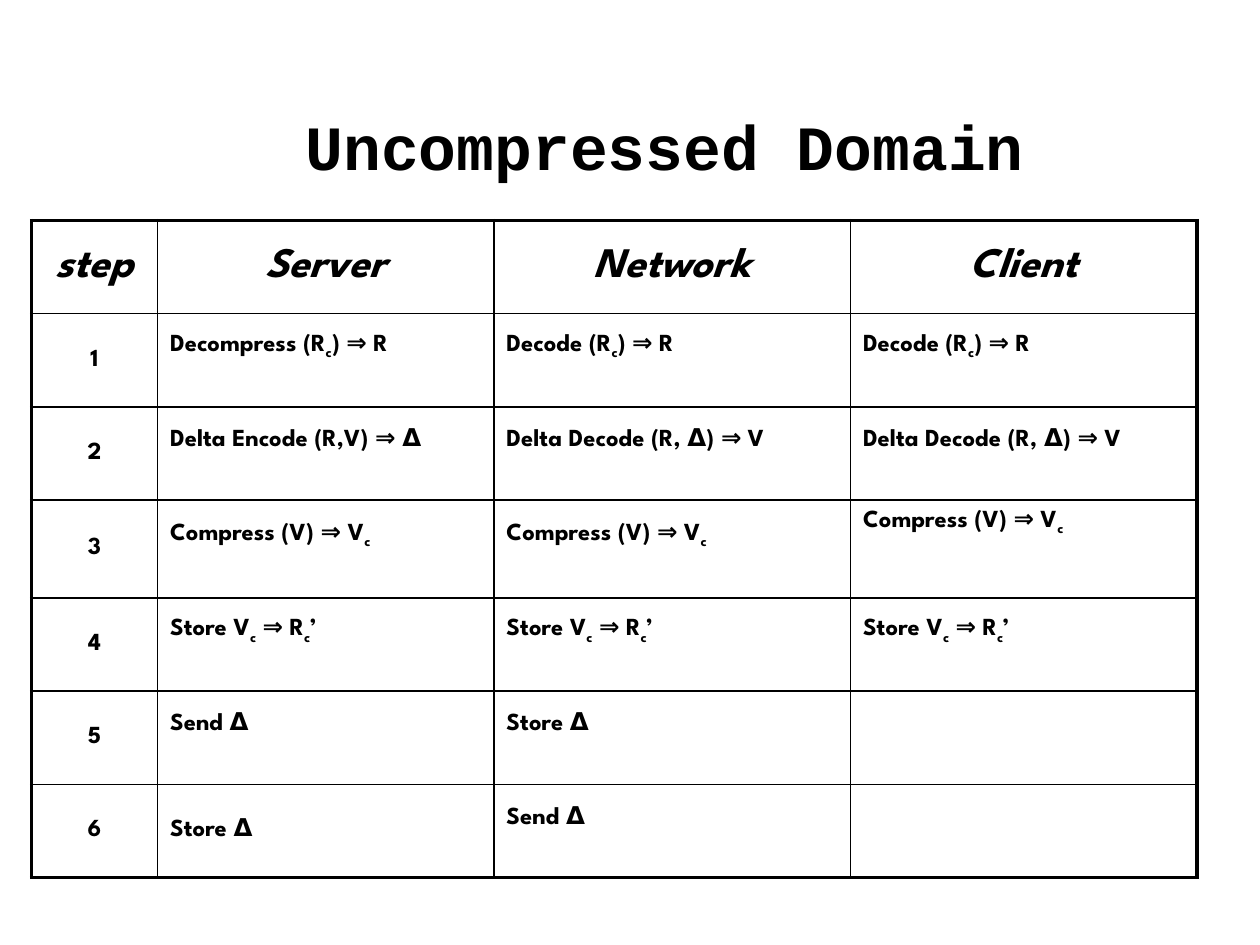
import dataclasses

import lxml.etree
import pptx
import pptx.dml.color
import pptx.enum.text
import pptx.oxml.ns
import pptx.util

ALIGN = pptx.enum.text.PP_ALIGN
MIDDLE = pptx.enum.text.MSO_ANCHOR.MIDDLE
INCH = pptx.util.Inches


@dataclasses.dataclass(frozen=True)
class Theme:
    ink: str = "000000"
    title_font: str = "Courier New"
    font: str = "League Spartan"
    title: float = 36
    head: float = 24
    body: float = 14
    thin: float = 1
    thick: float = 2.25


THEME = Theme()
COLS = (1, 2.67, 2.83, 2.75)
ROW = 0.74
PAD = 0.05
LIFT = 0.2

# The letter after an underscore is a subscript.
STEPS = (
    ("step", "Server", "Network", "Client"),
    ("1", "Decompress (R_c) ⇒ R", "Decode (R_c) ⇒ R", "Decode (R_c) ⇒ R"),
    ("2", "Delta Encode (R,V) ⇒ Δ", "Delta Decode (R, Δ) ⇒ V",
     "Delta Decode (R, Δ) ⇒ V"),
    ("3",) + ("Compress (V) ⇒ V_c",) * 3,
    ("4",) + ("Store V_c ⇒ R_c’",) * 3,
    ("5", "Send Δ", "Store Δ", ""),
    ("6", "Store Δ", "Send Δ", ""),
)
# Space kept below the text, where it differs from LIFT.
LIFTS = {(3, 3): 0.41, (6, 1): 0}


def style(font, face, size, slant=False):
    font.name = face
    font.size = pptx.util.Pt(size)
    font.bold = True
    font.italic = slant
    font.color.rgb = pptx.dml.color.RGBColor.from_string(THEME.ink)


def add_title(slide, text):
    box = slide.shapes.add_textbox(INCH(1.4), INCH(0.75), INCH(7.75), INCH(0.8))
    frame = box.text_frame
    frame.word_wrap = True
    frame.vertical_anchor = MIDDLE
    frame.text = text
    line = frame.paragraphs[0]
    line.alignment = ALIGN.CENTER
    style(line.runs[0].font, THEME.title_font, THEME.title)


def add_runs(line, text, size, slant):
    """Write text in runs, lowering each letter marked by an underscore."""
    first, *rest = text.split("_")
    parts = [(first, False)]
    for part in rest:
        parts += [(part[0], True), (part[1:], False)]
    for words, low in parts:
        if words:
            run = line.add_run()
            run.text = words
            style(run.font, THEME.font, size, slant)
            if low:
                run.font._element.set("baseline", "-25000")


def add_edges(cell, widths):
    """Draw the left, right, top and bottom borders, in that order."""
    props = cell._tc.get_or_add_tcPr()
    name = pptx.oxml.ns.qn
    for side, width in zip("LRTB", widths):
        edge = lxml.etree.SubElement(
            props, name("a:ln" + side), w=str(pptx.util.Pt(width)))
        fill = lxml.etree.SubElement(edge, name("a:solidFill"))
        lxml.etree.SubElement(fill, name("a:srgbClr"), val=THEME.ink)


def fill_cell(cell, text, row, col):
    head = row == 0
    center = head or col == 0
    outer = (col == 0, col == len(COLS) - 1, head, row == len(STEPS) - 1)
    add_edges(cell, [THEME.thick if side else THEME.thin for side in outer])
    cell.fill.background()
    cell.vertical_anchor = MIDDLE
    if not center:
        cell.margin_bottom = INCH(PAD + LIFTS.get((row, col), LIFT))
    line = cell.text_frame.paragraphs[0]
    line.alignment = ALIGN.CENTER if center else ALIGN.LEFT
    line.font.size = pptx.util.Pt(THEME.body)
    add_runs(line, text, THEME.head if head else THEME.body, head)


def add_steps(slide):
    shape = slide.shapes.add_table(
        len(STEPS), len(COLS), INCH(0.25), INCH(1.75),
        INCH(sum(COLS)), INCH(ROW * len(STEPS)))
    table = shape.table
    table.first_row = table.horz_banding = False
    for col, width in zip(table.columns, COLS):
        col.width = INCH(width)
    for row, texts in enumerate(STEPS):
        table.rows[row].height = INCH(ROW)
        for col, text in enumerate(texts):
            fill_cell(table.cell(row, col), text, row, col)


def main():
    deck = pptx.Presentation()
    deck.slide_width, deck.slide_height = INCH(10), INCH(7.5)
    slide = deck.slides.add_slide(deck.slide_layouts[6])
    add_title(slide, "Uncompressed Domain")
    add_steps(slide)
    deck.save("out.pptx")


if __name__ == "__main__":
    main()
